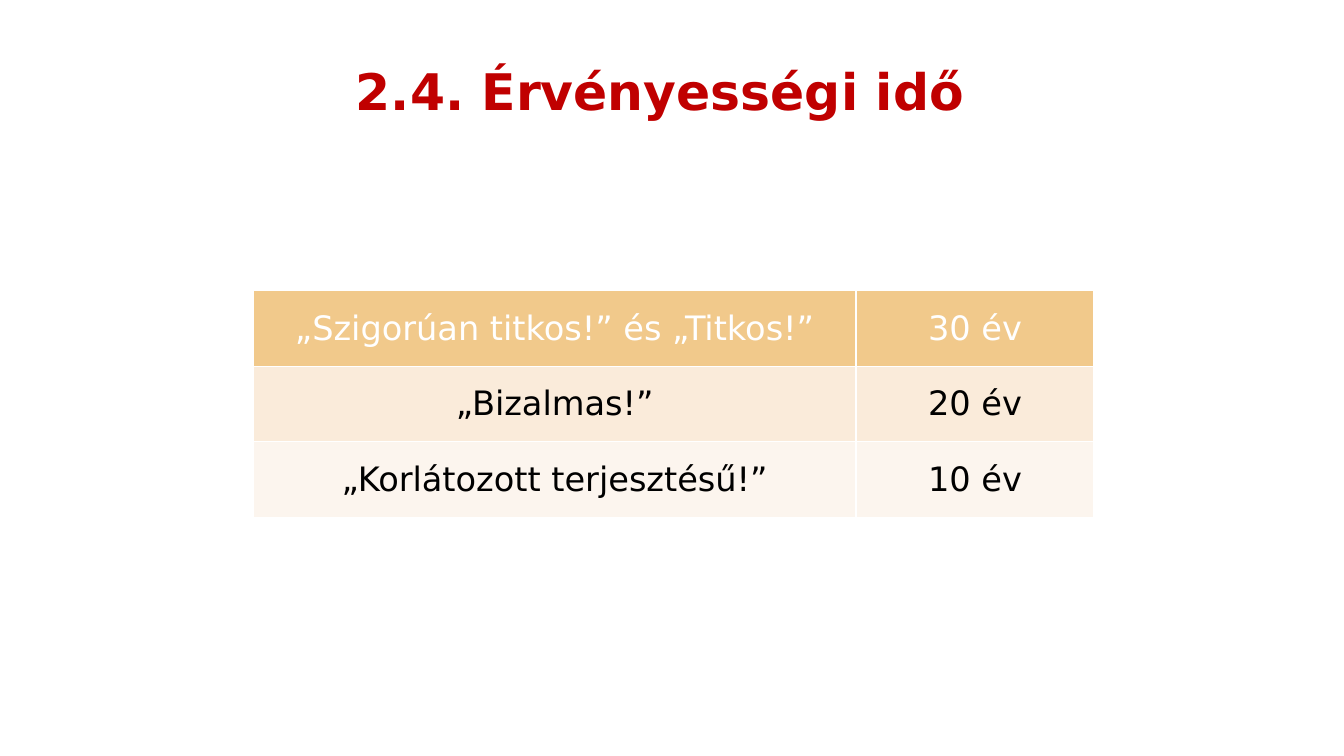
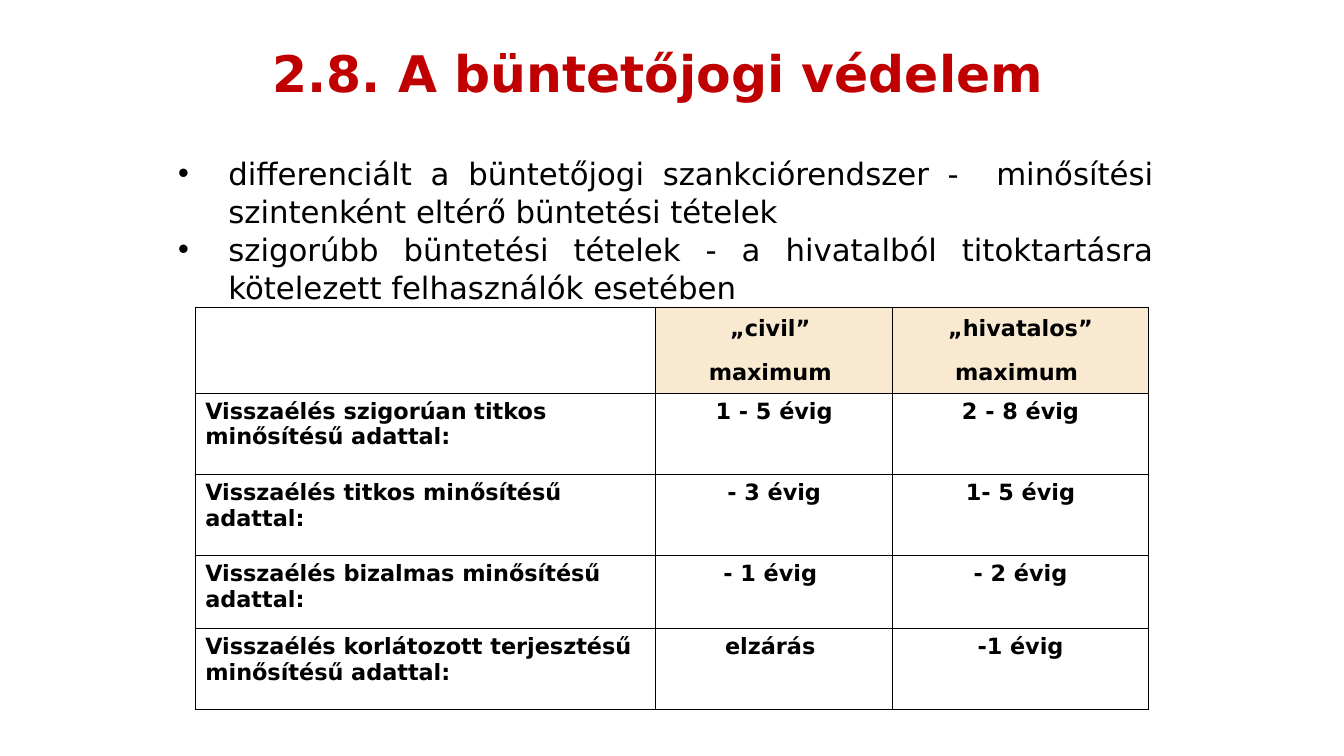
from lxml import etree
from pptx import Presentation
from pptx.dml import color
from pptx.enum import text
from pptx.oxml import ns
from pptx.util import Pt

COLOURS = {
    "title": "C00000",
    "ink": "000000",
    "paper": "FFFFFF",
    "amber": "F1C98B",
    "sand": "FAEBDA",
    "cream": "FCF5EE",
    "wheat": "F9E9D1",
}
ALIGN = text.PP_ALIGN
ANCHOR = text.MSO_ANCHOR
TITLE_ONLY, TITLE_AND_CONTENT = 5, 1


def apply(target, values):
    for name, value in values.items():
        setattr(target, name, value)


class Slides:
    font_name = "DejaVu Sans"
    title_format = {"size": Pt(36), "bold": True}
    list_format = {"size": Pt(22), "bold": False}

    def __init__(self):
        self.deck = Presentation()
        apply(self.deck, {"slide_width": Pt(960), "slide_height": Pt(540)})
        self.page = None

    def add_page(self, layout):
        self.page = self.deck.slides.add_slide(self.deck.slide_layouts[layout])

    def place(self, box, left, top, width, height, anchor):
        apply(box, {"left": Pt(left), "top": Pt(top),
                    "width": Pt(width), "height": Pt(height)})
        apply(box.text_frame, {"word_wrap": True, "vertical_anchor": anchor,
                               "auto_size": text.MSO_AUTO_SIZE.NONE})

    def style(self, para, font, colour, layout):
        apply(para, layout)
        for span in para.runs:
            apply(span.font, {"name": self.font_name, **font})
            span.font.color.rgb = color.RGBColor.from_string(COLOURS[colour])

    def title(self, wording, *bounds):
        box = self.page.shapes.title
        self.place(box, *bounds, ANCHOR.MIDDLE)
        box.text_frame.text = wording
        self.style(box.text_frame.paragraphs[0], self.title_format, "title",
                   {"alignment": ALIGN.CENTER})

    def bullets(self, items, *bounds):
        box = self.page.placeholders[1]
        self.place(box, *bounds, ANCHOR.TOP)
        box.text_frame.text = "\n".join(items)
        for para in box.text_frame.paragraphs:
            apply_indent = para._p.get_or_add_pPr().set
            apply_indent("marL", str(Pt(36)))
            apply_indent("indent", str(Pt(-36)))
            self.style(para, self.list_format, "ink",
                       {"alignment": ALIGN.JUSTIFY, "space_before": Pt(0),
                        "line_spacing": 1.03})

    def border(self, cell, colour):
        properties = cell._tc.get_or_add_tcPr()
        for side in ("lnL", "lnR", "lnT", "lnB"):
            line = etree.SubElement(properties, ns.qn(f"a:{side}"), w=str(Pt(1)))
            fill = etree.SubElement(line, ns.qn("a:solidFill"))
            etree.SubElement(fill, ns.qn("a:srgbClr"), val=COLOURS[colour])

    def cell(self, cell, wording, fill, line, anchor, font, colour, layout):
        self.border(cell, line)
        cell.fill.solid()
        cell.fill.fore_color.rgb = color.RGBColor.from_string(COLOURS[fill])
        cell.vertical_anchor = anchor
        cell.text = wording
        for para in cell.text_frame.paragraphs:
            self.style(para, font, colour, layout)

    def table(self, left, top, widths, heights):
        frame = self.page.shapes.add_table(
            len(heights), len(widths), Pt(left), Pt(top),
            Pt(sum(widths)), Pt(sum(heights)))
        apply(frame.table, {"first_row": False, "horz_banding": False})
        for column, width in zip(frame.table.columns, widths):
            column.width = Pt(width)
        for row, height in zip(frame.table.rows, heights):
            row.height = Pt(height)
        return frame.table


def validity_page(slides):
    slides.add_page(TITLE_ONLY)
    slides.title("2.4. Érvényességi idő", 111.5, 39, 720, 51)
    rows = [
        ("amber", "paper", "„Szigorúan titkos!” és „Titkos!”", "30 év"),
        ("sand", "ink", "„Bizalmas!”", "20 év"),
        ("cream", "ink", "„Korlátozott terjesztésű!”", "10 év"),
    ]
    table = slides.table(181, 207.5, [430.5, 170], [54.5, 53.5, 54.5])
    for row, (fill, colour, *wordings) in enumerate(rows):
        for column, wording in enumerate(wordings):
            slides.cell(table.cell(row, column), wording, fill, "paper",
                        ANCHOR.MIDDLE, {"size": Pt(24), "bold": False},
                        colour, {"alignment": ALIGN.CENTER})


def penalty_page(slides):
    slides.add_page(TITLE_AND_CONTENT)
    slides.title("2.8. A büntetőjogi védelem", 120, 0, 700, 103)
    slides.bullets([
        "differenciált a büntetőjogi szankciórendszer -  minősítési "
        "szintenként eltérő büntetési tételek",
        "szigorúbb büntetési tételek - a hivatalból titoktartásra "
        "kötelezett felhasználók esetében",
    ], 120, 106, 711, 114)
    rows = [
        ("", "„civil” \nmaximum ", "„hivatalos”\nmaximum "),
        ("Visszaélés szigorúan titkos minősítésű adattal:",
         "1 - 5 évig", "2 - 8 évig"),
        ("Visszaélés titkos minősítésű adattal:", "- 3 évig", "1- 5 évig"),
        ("Visszaélés bizalmas minősítésű adattal:", "- 1 évig ", "- 2 évig"),
        ("Visszaélés korlátozott terjesztésű minősítésű adattal:",
         "elzárás ", "-1 évig"),
    ]
    heading = {"line_spacing": 1.15, "space_after": Pt(10)}
    table = slides.table(139.5, 219.5, [329, 169, 183], [61.5, 58, 58, 52, 58])
    for row, wordings in enumerate(rows):
        for column, wording in enumerate(wordings):
            is_heading = row == 0 and column > 0
            layout = {"alignment": ALIGN.CENTER if column else ALIGN.LEFT}
            if is_heading:
                layout.update(heading)
            slides.cell(table.cell(row, column), wording,
                        "wheat" if is_heading else "paper", "ink",
                        ANCHOR.TOP, {"size": Pt(16), "bold": True},
                        "ink", layout)


def main():
    slides = Slides()
    validity_page(slides)
    penalty_page(slides)
    slides.deck.save("out.pptx")


if __name__ == "__main__":
    main()
